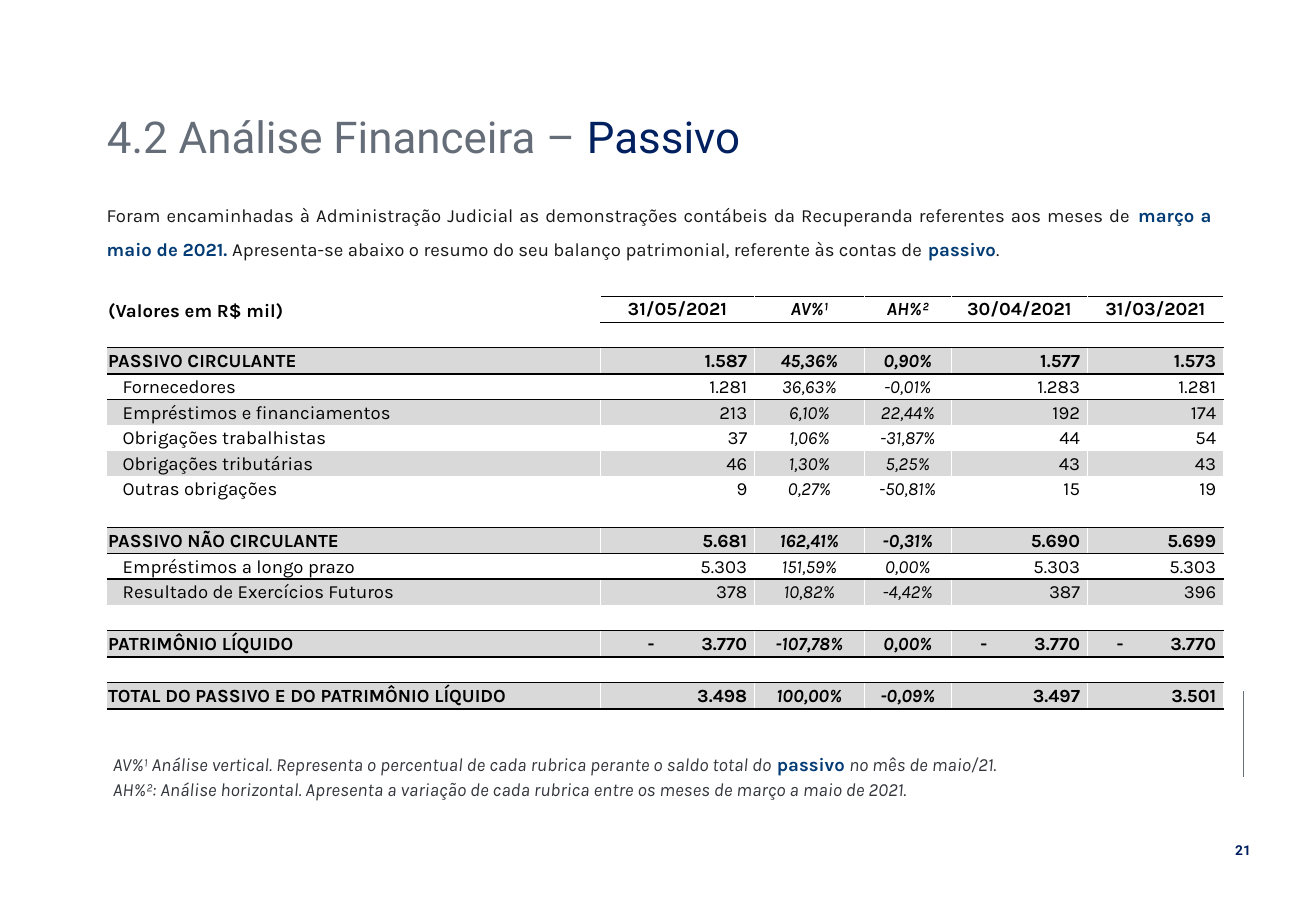
from lxml import etree
from pptx import Presentation
from pptx.dml.color import RGBColor
from pptx.enum.shapes import MSO_CONNECTOR
from pptx.enum.text import MSO_ANCHOR, PP_ALIGN
from pptx.oxml.ns import qn
from pptx.util import Inches, Pt

STRAIGHT = MSO_CONNECTOR.STRAIGHT
TOP, MIDDLE, BOTTOM = MSO_ANCHOR.TOP, MSO_ANCHOR.MIDDLE, MSO_ANCHOR.BOTTOM
LEFT, CENTER, RIGHT, JUSTIFY = PP_ALIGN.LEFT, PP_ALIGN.CENTER, PP_ALIGN.RIGHT, PP_ALIGN.JUSTIFY
COLORS = {"gray": "656D78", "navy": "002060", "blue": "033C75", "text": "181717",
          "note": "33363C", "black": "000000", "white": "FFFFFF", "band": "D9D9D9"}
NO_GRID_STYLE = "{2D5ABB26-0587-4C30-8999-92F81FD0307C}"


def add_run(paragraph, text, size, color, font="Karla", bold=False, italic=False):
    run = paragraph.add_run()
    run.text = text
    run.font.size = Pt(size)
    run.font.name = font
    run.font.bold = bold
    run.font.italic = italic
    run.font.color.rgb = RGBColor.from_string(COLORS[color])


def add_border(cell, side, color, width):
    line = etree.SubElement(cell._tc.get_or_add_tcPr(), qn(f"a:ln{side}"), w=str(Pt(width)))
    fill = etree.SubElement(line, qn("a:solidFill"))
    etree.SubElement(fill, qn("a:srgbClr"), val=COLORS[color])


presentation = Presentation()
presentation.slide_width = Inches(10.83)
presentation.slide_height = Inches(7.5)
slide = presentation.slides.add_slide(presentation.slide_layouts[5])

# Title
title = slide.shapes.title
title.left, title.top, title.width, title.height = (
    Inches(0.78), Inches(0.88), Inches(8.18), Inches(0.53))
title.text_frame.vertical_anchor = MIDDLE
paragraph = title.text_frame.paragraphs[0]
paragraph.alignment = LEFT
paragraph.line_spacing = 0.9
add_run(paragraph, "4.2 Análise Financeira – ", 26, "gray", "Roboto")
add_run(paragraph, "Passivo", 26, "navy", "Roboto")

# Side rule
rule = slide.shapes.add_connector(
    STRAIGHT, Inches(10.23), Inches(5.69), Inches(10.23), Inches(6.4))
rule.line.color.rgb = RGBColor.from_string(COLORS["gray"])
rule.line.width = Pt(0.5)
etree.SubElement(rule._element.spPr, qn("a:effectLst"))

# Page number
page_number = slide.shapes.add_textbox(Inches(10.06), Inches(6.88), Inches(0.34), Inches(0.24))
paragraph = page_number.text_frame.paragraphs[0]
paragraph.alignment = CENTER
add_run(paragraph, "21", 8.1, "navy", "Roboto", bold=True)

# Introduction
introduction = slide.shapes.add_textbox(Inches(0.78), Inches(1.54), Inches(9.29), Inches(0.63))
introduction.text_frame.word_wrap = True
paragraph = introduction.text_frame.paragraphs[0]
paragraph.alignment = JUSTIFY
paragraph.line_spacing = 1.5
for text, strong in [
    ("Foram encaminhadas à Administração Judicial as demonstrações contábeis da "
     "Recuperanda referentes aos meses de ", False),
    ("março a maio de 2021.", True),
    (" Apresenta-se abaixo o resumo do seu balanço patrimonial, referente às contas de ", False),
    ("passivo", True),
    (".", False),
]:
    add_run(paragraph, text, 11, "blue" if strong else "text", bold=strong)

# Footnotes
footnotes = slide.shapes.add_textbox(Inches(0.52), Inches(6.12), Inches(8.7), Inches(0.51))
footnotes.text_frame.word_wrap = True
notes = [
    [("AV%¹ Análise vertical. Representa o percentual de cada rubrica perante o saldo total do ",
      False), ("passivo", True), (" no mês de maio/21.", False)],
    [("AH%²: Análise horizontal. Apresenta a variação de cada rubrica entre os meses de "
      "março a maio de 2021.", False)],
]
for index, note in enumerate(notes):
    frame = footnotes.text_frame
    paragraph = frame.add_paragraph() if index else frame.paragraphs[0]
    paragraph.alignment = JUSTIFY
    paragraph.line_spacing = 1.14
    paragraph._p.get_or_add_pPr().set("marL", str(Inches(0.31)))
    for text, strong in note:
        add_run(paragraph, text, 11, "blue" if strong else "note", bold=strong, italic=not strong)

# Balance sheet: empty tuples are spacer rows
balance = [
    ("(Valores em R$ mil)", "31/05/2021", "AV%¹", "AH%²", "30/04/2021", "31/03/2021"),
    (),
    ("PASSIVO CIRCULANTE", "1.587", "45,36%", "0,90%", "1.577", "1.573"),
    ("Fornecedores", "1.281", "36,63%", "-0,01%", "1.283", "1.281"),
    ("Empréstimos e financiamentos", "213", "6,10%", "22,44%", "192", "174"),
    ("Obrigações trabalhistas", "37", "1,06%", "-31,87%", "44", "54"),
    ("Obrigações tributárias", "46", "1,30%", "5,25%", "43", "43"),
    ("Outras obrigações", "9", "0,27%", "-50,81%", "15", "19"),
    (),
    ("PASSIVO NÃO CIRCULANTE", "5.681", "162,41%", "-0,31%", "5.690", "5.699"),
    ("Empréstimos a longo prazo", "5.303", "151,59%", "0,00%", "5.303", "5.303"),
    ("Resultado de Exercícios Futuros", "378", "10,82%", "-4,42%", "387", "396"),
    (),
    ("PATRIMÔNIO LÍQUIDO", "-\t3.770", "-107,78%", "0,00%", "-\t3.770", "-\t3.770"),
    (),
    ("TOTAL DO PASSIVO E DO PATRIMÔNIO LÍQUIDO", "3.498", "100,00%", "-0,09%", "3.497", "3.501"),
]
column_widths = [4.06, 1.27, 0.9, 0.72, 1.12, 1.12]
header_row, total_rows, percent_columns = 0, (2, 9, 13, 15), (2, 3)
banded_rows = total_rows + (4, 6, 11)

# Horizontal rules, keyed by the row they lie above
rules = {0: 0.5, 1: 0.5}
for row in total_rows:
    rules[row] = 0.5
    rules[row + 1] = 1

table_frame = slide.shapes.add_table(
    len(balance), len(column_widths), Inches(0.88), Inches(2.44), Inches(9.19), Inches(3.4))
table = table_frame.table
table.first_row = table.horz_banding = False
table._tbl.tblPr.find(qn("a:tableStyleId")).text = NO_GRID_STYLE
for column, width in enumerate(column_widths):
    table.columns[column].width = Inches(width)

for row, values in enumerate(balance):
    table.rows[row].height = Inches(0.22 if row in total_rows else 0.21)
    bold = row == header_row or row in total_rows
    for column, width in enumerate(column_widths):
        cell = table.cell(row, column)
        cell.margin_left = cell.margin_right = cell.margin_top = Inches(0.01)
        cell.margin_bottom = 0
        cell.vertical_anchor = BOTTOM if (row, column) == (header_row, 0) else MIDDLE

        # Borders and fill
        if column:
            add_border(cell, "L", "white", 0.5)
        add_border(cell, "R", "white", 0.5)
        for side, edge in (("T", row), ("B", row + 1)):
            if edge in rules and (column or edge > 1):
                add_border(cell, side, "black", rules[edge])
        if row in banded_rows:
            cell.fill.solid()
            cell.fill.fore_color.rgb = RGBColor.from_string(COLORS["band"])
        else:
            cell.fill.background()

        # Text
        paragraph = cell.text_frame.paragraphs[0]
        if not values:
            etree.SubElement(paragraph._p, qn("a:endParaRPr"), sz="1100")
            continue
        text = values[column]
        if column == 0:
            paragraph.alignment = LEFT
            if not bold:
                cell.margin_left = Inches(0.13)
        elif row == header_row or column in percent_columns:
            paragraph.alignment = CENTER
        elif "\t" in text:
            # Minus sign on the left, amount on a right-aligned tab
            paragraph.alignment = LEFT
            cell.margin_left = Inches(width - 0.88)
            tabs = etree.SubElement(paragraph._p.get_or_add_pPr(), qn("a:tabLst"))
            etree.SubElement(tabs, qn("a:tab"), pos=str(Inches(0.82)), algn="r")
        else:
            paragraph.alignment = RIGHT
            cell.margin_right = Inches(0.06)
        add_run(paragraph, text, 11, "black", bold=bold, italic=column in percent_columns)

presentation.save("out.pptx")
